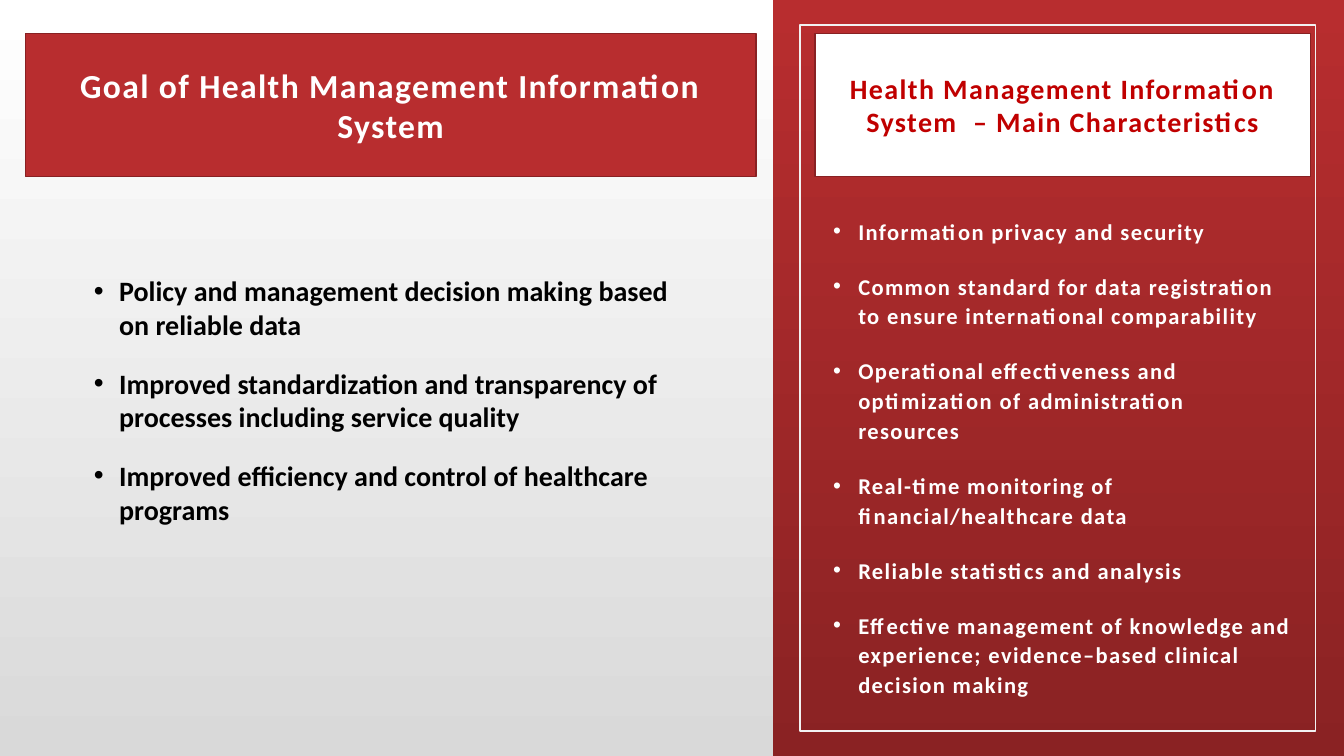
from dataclasses import dataclass

from lxml import etree
from pptx import Presentation
from pptx import util as u
from pptx.dml.color import RGBColor
from pptx.enum import shapes, text
from pptx.oxml import ns


@dataclass(frozen=True)
class Theme:
    font: str = "Calibri"
    red: str = "B82D2F"
    deep_red: str = "8A2223"
    edge: str = "882123"
    accent: str = "C00000"
    white: str = "FFFFFF"
    black: str = "000000"
    gray: str = "D9D9D9"
    frame: str = "F2F2F2"
    heading: float = 24
    subheading: float = 20
    body: float = 20
    small: float = 16.1
    gap: float = 18


COLUMNS, ROWS = 160, 90
GOALS = [
    "Policy and management decision making based on reliable data",
    "Improved standardization and transparency of processes including service quality",
    "Improved efficiency and control of healthcare programs",
]
CHARACTERISTICS = [
    "Information privacy and security",
    "Common standard for data registration to ensure international comparability",
    "Operational effectiveness and optimization of administration resources",
    "Real-time monitoring of financial/healthcare data",
    "Reliable statistics and analysis",
    "Effective management of knowledge and experience; evidence–based clinical decision making",
]


def write_text(para, words, *, font, size, color, tracking=0, before=0,
               line=None, align=None, bullet=False):
    """Fill one paragraph with bold text in the given format."""
    para.space_before = u.Pt(before)
    para.line_spacing = line
    para.alignment = align
    if bullet:
        props = para._p.get_or_add_pPr()
        indent = u.Inches(0.25)
        props.set("marL", str(indent))
        props.set("indent", str(-indent))
        etree.SubElement(props, ns.qn("a:buFont"), typeface="Arial")
        etree.SubElement(props, ns.qn("a:buChar"), char="•")
    span = para.add_run()
    span.text = words
    span.font.name = font
    span.font.size = u.Pt(size)
    span.font.bold = True
    span.font.color.rgb = RGBColor.from_string(color)
    if tracking:
        span._r.get_or_add_rPr().set("spc", str(tracking * 100))


class Slide:
    """Holds the theme and the current page, measured in grid columns and rows."""

    def __init__(self, deck, theme):
        self.theme = theme
        self.column = deck.slide_width / COLUMNS
        self.row = deck.slide_height / ROWS
        self.page = deck.slides.add_slide(deck.slide_layouts[5])

    def place(self, left, top, width, height):
        return (u.Emu(round(left * self.column)), u.Emu(round(top * self.row)),
                u.Emu(round(width * self.column)), u.Emu(round(height * self.row)))

    def gradient(self, fill, start, end, angle):
        fill.gradient()
        fill.gradient_angle = angle
        for stop, color in zip(fill.gradient_stops, (start, end)):
            stop.color.rgb = RGBColor.from_string(color)

    def outline(self, box, color, width):
        box.line.color.rgb = RGBColor.from_string(color)
        box.line.width = u.Pt(width)

    def rectangle(self, *area):
        box = self.page.shapes.add_shape(shapes.MSO_SHAPE.RECTANGLE, *self.place(*area))
        box.shadow.inherit = False
        box.fill.background()
        box.line.fill.background()
        return box

    def title(self, *area):
        box = self.page.shapes.title
        box.left, box.top, box.width, box.height = self.place(*area)
        return box

    def heading(self, box, words, fill, color, size):
        box.fill.solid()
        box.fill.fore_color.rgb = RGBColor.from_string(fill)
        self.outline(box, self.theme.edge, 1)
        frame = box.text_frame
        frame.word_wrap = True
        frame.auto_size = text.MSO_AUTO_SIZE.NONE
        frame.vertical_anchor = text.MSO_ANCHOR.MIDDLE
        write_text(frame.paragraphs[0], words, font=self.theme.font, size=size,
                   color=color, tracking=1, before=self.theme.gap,
                   align=text.PP_ALIGN.CENTER)

    def bullets(self, items, *area, **style):
        frame = self.page.shapes.add_textbox(*self.place(*area)).text_frame
        frame.word_wrap = True
        for index, words in enumerate(items):
            para = frame.add_paragraph() if index else frame.paragraphs[0]
            write_text(para, words, font=self.theme.font, before=self.theme.gap,
                       bullet=True, **style)


def main():
    deck = Presentation()
    deck.slide_width, deck.slide_height = u.Inches(13.33), u.Inches(7.5)
    theme = Theme()
    slide = Slide(deck, theme)

    # Background, red side panel and its thin frame
    slide.gradient(slide.page.background.fill, theme.gray, theme.white, 90)
    panel = slide.rectangle(92, 0, 68, ROWS)
    slide.gradient(panel.fill, theme.red, theme.deep_red, 270)
    slide.outline(slide.rectangle(95.2, 3, 61.4, 84), theme.frame, 1.25)

    # Headings
    slide.heading(slide.title(3, 4, 87, 17),
                  "Goal of Health Management Information System",
                  theme.red, theme.white, theme.heading)
    slide.heading(slide.rectangle(97, 4, 59, 17),
                  "Health Management Information System  – Main Characteristics",
                  theme.white, theme.accent, theme.subheading)

    # Bullet lists
    slide.bullets(GOALS, 10, 32, 71, 49.5, size=theme.body, color=theme.black)
    slide.bullets(CHARACTERISTICS, 98, 25, 57, 60, size=theme.small,
                  color=theme.white, tracking=1, line=1.1)

    deck.save("out.pptx")


if __name__ == "__main__":
    main()
